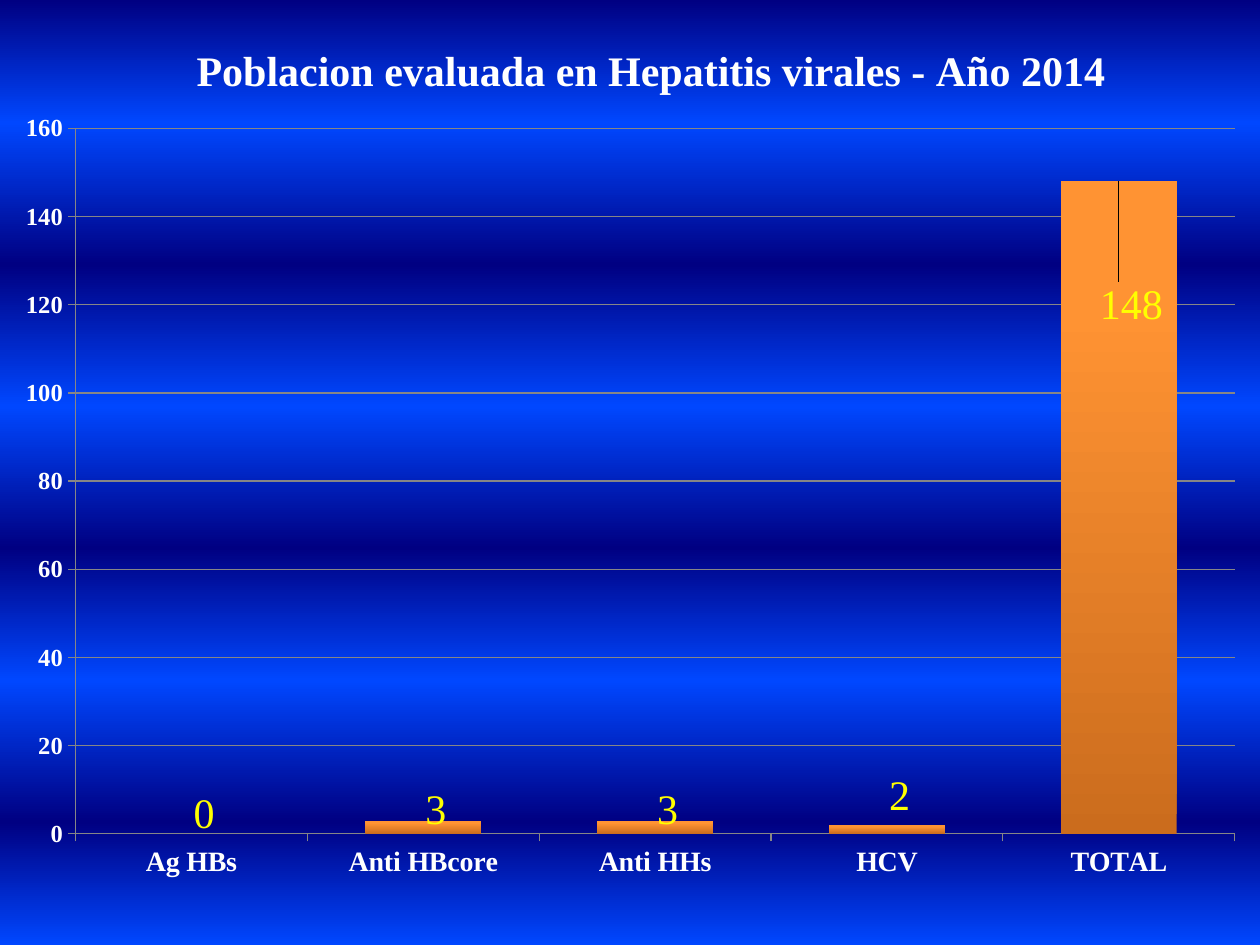
from dataclasses import dataclass

from lxml.etree import SubElement
from pptx import Presentation
from pptx.chart.data import CategoryChartData
from pptx.dml.color import RGBColor
from pptx.enum.chart import XL_CHART_TYPE, XL_TICK_MARK
from pptx.oxml import parse_xml
from pptx.oxml.ns import nsdecls, qn
from pptx.util import Pt


@dataclass(frozen=True)
class Theme:
    font: str = "Times New Roman"
    navy: str = "000082"
    blue: str = "0047FF"
    white: str = "FFFFFF"
    yellow: str = "FFFF00"
    grey: str = "868686"
    bar_dark: str = "CB6C1D"
    bar_light: str = "FF9333"
    title: int = 24
    label: int = 24
    category: int = 16
    value: int = 14


THEME = Theme()
TITLE = "Poblacion evaluada en Hepatitis virales - Año 2014"
RESULTS = {"Ag HBs": 0, "Anti HBcore": 3, "Anti HHs": 3, "HCV": 2, "TOTAL": 148}
# Shift of each value label, as a share of the chart's width and height
LABEL_SHIFTS = [(0.01, 0.01), (0.01, 0.02), (0.01, 0.02), (0.01, 0), (0.01, 0.17)]


def format_font(font, size, color=THEME.white, bold=True):
    font.name = THEME.font
    font.size = Pt(size)
    font.bold = bold
    font.color.rgb = RGBColor.from_string(color)


def write_text(tf, text, **style):
    r = tf.paragraphs[0].add_run()
    r.text = text
    format_font(r.font, **style)


def fill_gradient(fill, owner, stops, angle):
    fill.gradient()
    fill.gradient_angle = angle
    gs_list = next(owner.iter(qn("a:gsLst")))
    for gs in list(gs_list):
        gs_list.remove(gs)
    for percent, color in stops:
        gs = SubElement(gs_list, qn("a:gs"), pos=str(percent * 1000))
        SubElement(gs, qn("a:srgbClr"), val=color)


def manual_layout(x, y, w=None, h=None):
    parts = [("layoutTarget", "inner")] if w else []
    if w or h:
        parts += [("xMode", "edge"), ("yMode", "edge")]
    parts += [("x", x), ("y", y)]
    if w:
        parts += [("w", w), ("h", h)]
    body = "".join(f'<c:{tag} val="{val}"/>' for tag, val in parts)
    return parse_xml(f'<c:layout {nsdecls("c")}><c:manualLayout>{body}'
                     "</c:manualLayout></c:layout>")


def edge_layout(x, y):
    layout = manual_layout(x, y)
    for i, mode in enumerate(("c:xMode", "c:yMode")):
        el = SubElement(layout[0], qn(mode), val="edge")
        layout[0].insert(i, el)
    return layout


def set_layout(parent, layout, index=0):
    for old in parent.findall(qn("c:layout")):
        parent.remove(old)
    parent.insert(index, layout)


def format_line(line):
    line.color.rgb = RGBColor.from_string(THEME.grey)
    line.width = Pt(0.75)


def format_axis(axis, size):
    axis.major_tick_mark = XL_TICK_MARK.OUTSIDE
    axis.minor_tick_mark = XL_TICK_MARK.NONE
    format_line(axis.format.line)
    format_font(axis.tick_labels.font, size)


def add_title(chart):
    chart.has_title = True
    title = chart.chart_title
    write_text(title.text_frame, TITLE, size=THEME.title)
    title.include_in_layout = False
    set_layout(chart.element.find(".//" + qn("c:title")), edge_layout(0.15, 0.04), 1)


def add_labels(series):
    labels = series.data_labels
    labels.show_value = True
    format_font(labels.font, THEME.label, THEME.yellow, False)
    for i, (dx, dy) in enumerate(LABEL_SHIFTS):
        format_font(series.points[i].data_label.font, THEME.label, THEME.yellow, False)
        label = series.data_labels._element.findall(qn("c:dLbl"))[i]
        set_layout(label, manual_layout(dx, dy), 1)


def add_column_chart(s):
    data = CategoryChartData()
    data.categories = list(RESULTS)
    data.add_series("Series 1", list(RESULTS.values()))
    frame = s.shapes.add_chart(XL_CHART_TYPE.COLUMN_CLUSTERED,
                               0, 0, Pt(720), Pt(512), data)
    chart = frame.chart
    chart.has_legend = False
    format_font(chart.font, 10, bold=False)
    add_title(chart)
    set_layout(chart.element.find(".//" + qn("c:plotArea")),
               manual_layout(0.06, 0.1434, 0.92, 0.7874))

    # Axes and gridlines
    format_axis(chart.category_axis, THEME.category)
    axis = chart.value_axis
    format_axis(axis, THEME.value)
    axis.minimum_scale, axis.maximum_scale, axis.major_unit = 0, 160, 20
    axis.has_major_gridlines = True
    format_line(axis.major_gridlines.format.line)

    # Columns
    plot = chart.plots[0]
    plot.gap_width = 100
    plot.vary_by_categories = False
    series = plot.series[0]
    stops = [(0, THEME.bar_dark), (80, THEME.bar_light), (100, THEME.bar_light)]
    fill_gradient(series.format.fill, chart.element, stops, 90)
    add_labels(series)


def main():
    prs = Presentation()
    prs.slide_width, prs.slide_height = Pt(720), Pt(540)
    s = prs.slides.add_slide(prs.slide_layouts[6])

    # Banded background
    positions = (0, 13, 28, 43, 58, 72, 87, 100)
    stops = [(pos, (THEME.navy, THEME.blue)[i % 2]) for i, pos in enumerate(positions)]
    fill_gradient(s.background.fill, s.element, stops, 270)

    add_column_chart(s)
    prs.save("out.pptx")


if __name__ == "__main__":
    main()
